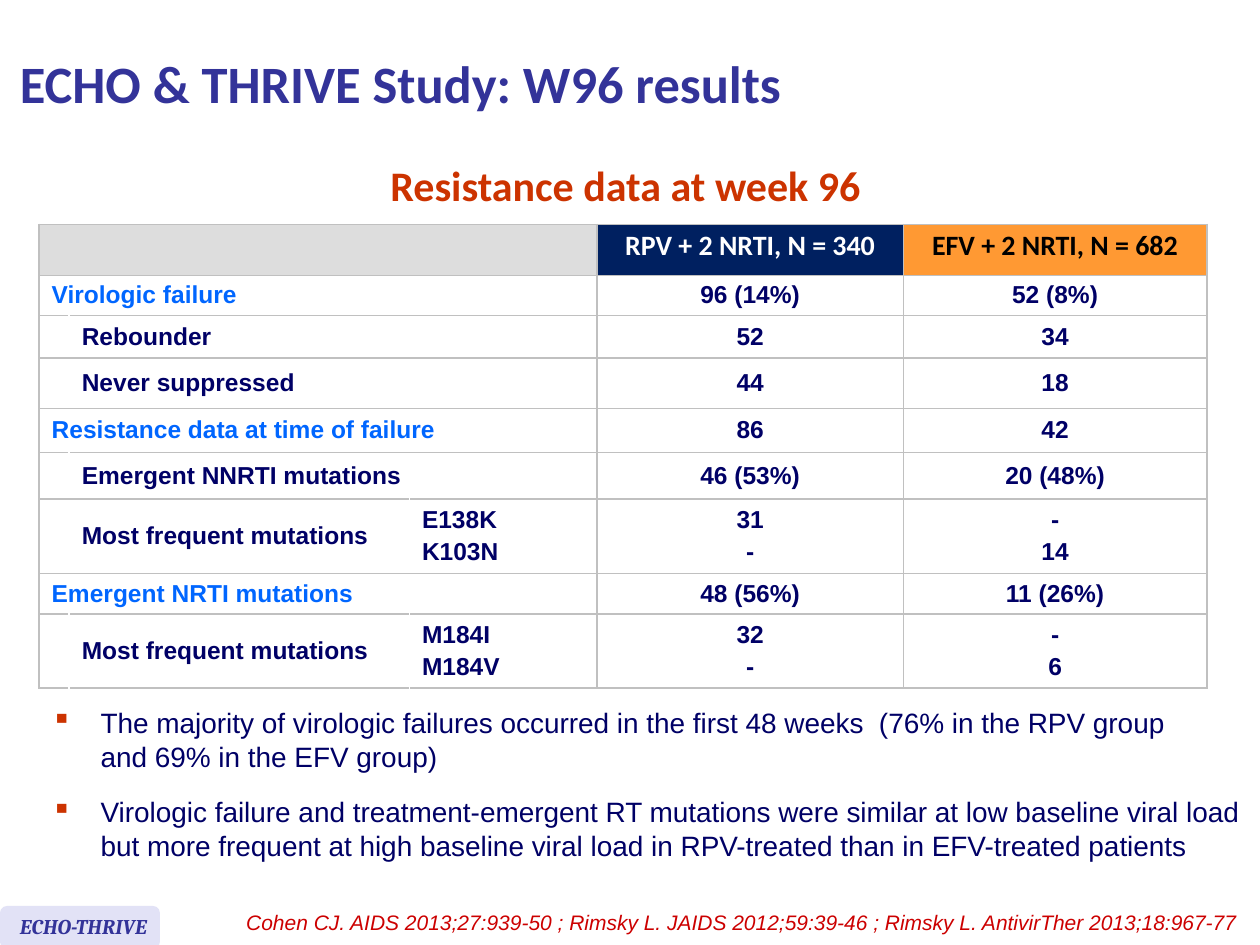
"""Build the ECHO & THRIVE week 96 resistance slide."""
from lxml import etree
from pptx import Presentation
from pptx import util as u
from pptx.dml.color import RGBColor
from pptx.enum import shapes, text
from pptx.oxml import ns

NAVY = RGBColor(0x00, 0x00, 0x66)
BLUE = RGBColor(0x00, 0x66, 0xFF)
INDIGO = RGBColor(0x33, 0x33, 0x99)
LAVENDER = RGBColor(0xE2, 0xE2, 0xF6)
RUST = RGBColor(0xCC, 0x33, 0x00)
RED = RGBColor(0xCC, 0x00, 0x00)
SILVER = RGBColor(0xC0, 0xC0, 0xC0)
GREY = RGBColor(0xDD, 0xDD, 0xDD)
RPV_BLUE = RGBColor(0x00, 0x20, 0x60)
EFV_ORANGE = RGBColor(0xFF, 0x99, 0x33)
WHITE = RGBColor(0xFF, 0xFF, 0xFF)
BLACK = RGBColor(0x00, 0x00, 0x00)

deck = Presentation()
deck.slide_width, deck.slide_height = u.Inches(10), u.Inches(7.5)
COLUMN, ROW = deck.slide_width / 100, deck.slide_height / 75
page = deck.slides.add_slide(deck.slide_layouts[6])


def write(para, words, size, face, color, bold=False, italic=False):
    span = para.add_run()
    span.text = words
    span.font.size, span.font.name = u.Pt(size), face
    span.font.bold, span.font.italic = bold, italic
    span.font.color.rgb = color


def add_text(parent, left, top, width, height, wrap=True):
    box = parent.add_textbox(int(left * COLUMN), int(top * ROW), int(width * COLUMN), int(height * ROW))
    box.text_frame.word_wrap = wrap
    box.text_frame.auto_size = text.MSO_AUTO_SIZE.SHAPE_TO_FIT_TEXT
    return box.text_frame


widths = [2.3, 27, 14.9, 24.3, 24.1]
heights = [3.2, 3.2, 3.2, 4, 3.5, 3.7, 5.9, 3.2, 5.9]
rows = [
    (0, [], ["RPV + 2 NRTI, N = 340"], ["EFV + 2 NRTI, N = 682"]),
    (0, ["Virologic failure"], ["96 (14%)"], ["52 (8%)"]),
    (1, ["Rebounder"], ["52"], ["34"]),
    (1, ["Never suppressed"], ["44"], ["18"]),
    (0, ["Resistance data at time of failure"], ["86"], ["42"]),
    (1, ["Emergent NNRTI mutations"], ["46 (53%)"], ["20 (48%)"]),
    (1, ["Most frequent mutations"], ["E138K", "K103N"], ["31", "-"], ["-", "14"]),
    (0, ["Emergent NRTI mutations"], ["48 (56%)"], ["11 (26%)"]),
    (1, ["Most frequent mutations"], ["M184I", "M184V"], ["32", "-"], ["-", "6"]),
]
frame = page.shapes.add_table(
    len(rows), len(widths), int(3.1 * COLUMN), int(17.8 * ROW),
    int(sum(widths) * COLUMN), int(sum(heights) * ROW))
table = frame.table
for column, width in zip(table.columns, widths):
    column.width = int(width * COLUMN)
for line, height in zip(table.rows, heights):
    line.height = int(height * ROW)

for r, (indent, *entries) in enumerate(rows):
    if len(entries) == 3:
        table.cell(r, indent).merge(table.cell(r, 2))
    starts = [indent, 3, 4] if len(entries) == 3 else [1, 2, 3, 4]
    contents = dict(zip(starts, entries))
    for c in range(len(widths)):
        cell = table.cell(r, c)
        last = c + (cell.span_width if cell.is_merge_origin else 1) - 1
        edges = ["lnL"] * (c in (0, 3, 4)) + ["lnR"] * (last >= 2) + ["lnT", "lnB"]
        properties = cell._tc.get_or_add_tcPr()
        for edge in edges:
            border = etree.SubElement(properties, ns.qn(f"a:{edge}"), w=str(u.Pt(1)))
            paint = etree.SubElement(border, ns.qn("a:solidFill"))
            etree.SubElement(paint, ns.qn("a:srgbClr"), val=str(SILVER))
        cell.fill.solid()
        cell.fill.fore_color.rgb = (GREY, GREY, GREY, RPV_BLUE, EFV_ORANGE)[c] if r == 0 else WHITE
        cell.vertical_anchor = text.MSO_ANCHOR.MIDDLE
        if r > 0:
            cell.text_frame.paragraphs[0].font.size = u.Pt(14)
        for i, words in enumerate(contents.get(c, [])):
            para = cell.text_frame.paragraphs[0] if i == 0 else cell.text_frame.add_paragraph()
            para.line_spacing, para.space_after = u.Pt(15.6), u.Pt(3)
            para.alignment = text.PP_ALIGN.CENTER if c > 2 else text.PP_ALIGN.LEFT
            if r == 0:
                write(para, words, 16, "Calibri", WHITE if c == 3 else BLACK, bold=True)
            else:
                write(para, words, 14, "Arial", BLUE if c == 0 else NAVY, bold=True)

heading = add_text(page.shapes, 30, 12.6, 39.7, 4.7, wrap=False).paragraphs[0]
heading.line_spacing = 0.9
write(heading, "Resistance data at week 96", 24, "Calibri", RUST, bold=True)

findings = [
    (55.5, 92.6, "The majority of virologic failures occurred in the first 48 weeks  "
     "(76% in the RPV group and 69% in the EFV group)"),
    (62.6, 96.6, "Virologic failure and treatment-emergent RT mutations were similar at low baseline "
     "viral load but more frequent at high baseline viral load in RPV-treated than in EFV-treated patients"),
]
for top, width, words in findings:
    para = add_text(page.shapes, 3.1, top, width, 6.4).paragraphs[0]
    properties = para._p.get_or_add_pPr()
    properties.set("marL", str(int(3.9 * COLUMN)))
    properties.set("indent", str(int(-3.9 * COLUMN)))
    tint = etree.SubElement(properties, ns.qn("a:buClr"))
    etree.SubElement(tint, ns.qn("a:srgbClr"), val=str(RUST))
    etree.SubElement(properties, ns.qn("a:buChar"), char="▪")
    write(para, words, 16, "Arial", NAVY)

citation = add_text(page.shapes, 15.6, 71.7, 84.1, 3).paragraphs[0]
citation.alignment = text.PP_ALIGN.RIGHT
write(citation, "Cohen CJ. AIDS 2013;27:939-50 ; Rimsky L. JAIDS 2012;59:39-46 ; "
      "Rimsky L. AntivirTher 2013;18:967-77 ", 12, "Arial", RED, italic=True)

badge = page.shapes.add_group_shape()
plate = badge.shapes.add_shape(
    shapes.MSO_SHAPE.ROUNDED_RECTANGLE, 0, int(71.9 * ROW), int(12.7 * COLUMN), int(3.4 * ROW))
plate.shadow.inherit = False
plate.fill.solid()
plate.fill.fore_color.rgb = LAVENDER
plate.line.fill.background()
label = add_text(badge.shapes, 0.6, 72, 12.8, 3).paragraphs[0]
write(label, "ECHO-THRIVE", 12, "Cambria", INDIGO, bold=True, italic=True)

title = add_text(page.shapes, 0.6, 0.5, 99.4, 12.1)
title.auto_size = text.MSO_AUTO_SIZE.NONE
title.vertical_anchor = text.MSO_ANCHOR.MIDDLE
write(title.paragraphs[0], "ECHO & THRIVE Study: W96 results", 30, "Calibri", INDIGO, bold=True)

deck.save("out.pptx")
